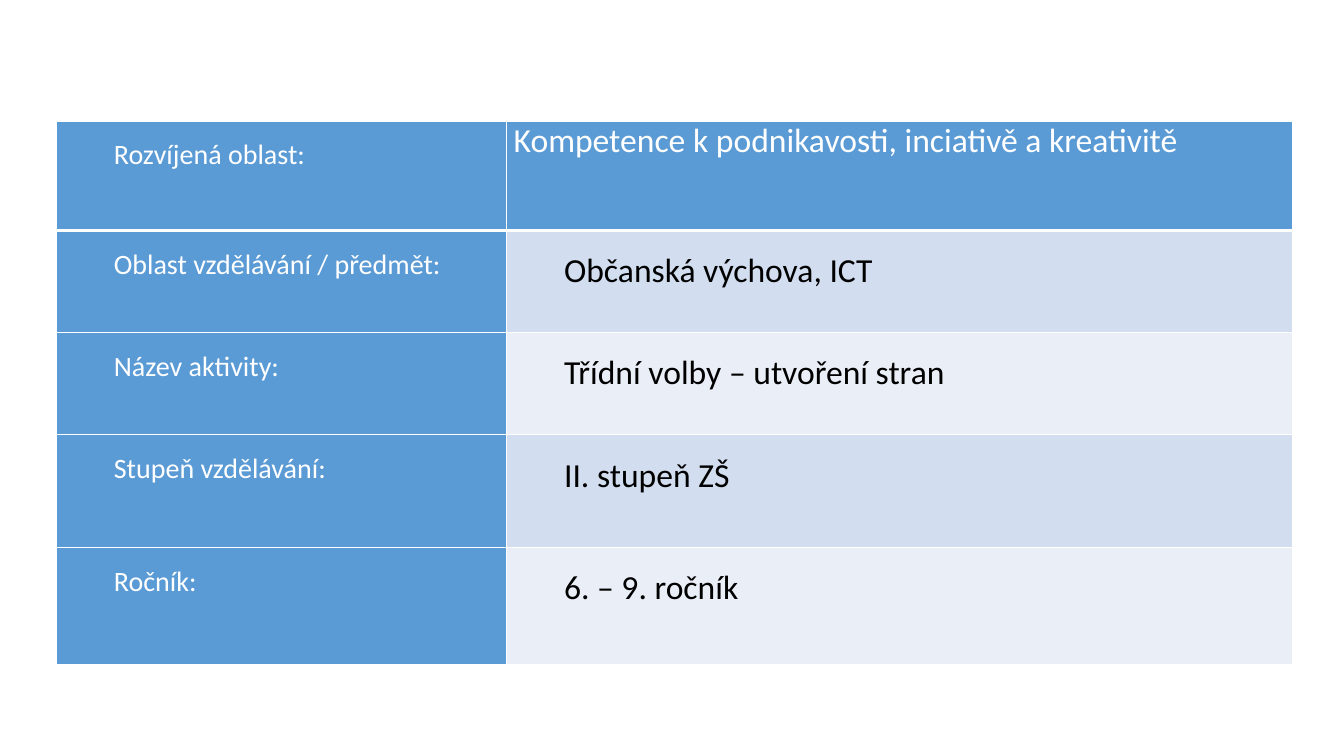
from lxml.etree import SubElement as Sub
from pptx import Presentation
from pptx.dml.color import RGBColor as RGB
from pptx.oxml.ns import qn
from pptx.util import Emu, Inches, Pt

WHITE = RGB(0xFF, 0xFF, 0xFF)
BLACK = RGB(0, 0, 0)
BLUE = RGB(0x5B, 0x9B, 0xD5)
BANDS = [RGB(0xEA, 0xEF, 0xF7), RGB(0xD2, 0xDE, 0xEF)]

# Sizes as shares of the slide
LEFT, TOP = 0.042, 0.16
COLS = [0.335, 0.585]
ROWS = [0.145, 0.135, 0.135, 0.149, 0.155]

FACTS = [
    ("Rozvíjená oblast:", "Kompetence k podnikavosti, inciativě a kreativitě"),
    ("Oblast vzdělávání / předmět:", "Občanská výchova, ICT"),
    ("Název aktivity:", "Třídní volby – utvoření stran"),
    ("Stupeň vzdělávání:", "II. stupeň ZŠ"),
    ("Ročník:", "6. – 9. ročník"),
]


def put(item, values):
    for name, value in values.items():
        setattr(item, name, value)


class Page:
    font = {"name": "Calibri", "bold": False}
    inset = {"margin_left": Inches(0.07), "margin_right": Inches(0.07),
             "margin_top": 0, "margin_bottom": 0}

    def __init__(self, deck):
        self.wide, self.high = deck.slide_width, deck.slide_height
        self.slide = deck.slides.add_slide(deck.slide_layouts[6])

    def x(self, share):
        return Emu(round(self.wide * share))

    def y(self, share):
        return Emu(round(self.high * share))

    def edge(self, cell, base):
        props = cell._tc.get_or_add_tcPr()
        for side in "LRTB":
            width = base if side == "B" else 1
            line = Sub(props, qn(f"a:ln{side}"), w=str(Pt(width)))
            Sub(Sub(line, qn("a:solidFill")), qn("a:srgbClr"), val=str(WHITE))

    def cell(self, cell, text, size, ink, fill, base, deep):
        self.edge(cell, base)
        put(cell, self.inset)
        cell.fill.solid()
        cell.fill.fore_color.rgb = fill
        para = cell.text_frame.paragraphs[0]
        if deep:
            para.line_spacing = 1.5
            para._p.get_or_add_pPr().set("marL", str(Inches(0.5)))
        run = para.add_run()
        run.text = text
        put(run.font, {**self.font, "size": Pt(size)})
        run.font.color.rgb = ink

    def table(self, facts):
        grid = self.slide.shapes.add_table(
            len(ROWS), len(COLS), self.x(LEFT), self.y(TOP),
            self.x(sum(COLS)), self.y(sum(ROWS))).table
        for col, share in zip(grid.columns, COLS):
            col.width = self.x(share)
        for row, share in zip(grid.rows, ROWS):
            row.height = self.y(share)
        for r, (label, value) in enumerate(facts):
            head = r == 0
            base = 3 if head else 1
            ink, fill = (WHITE, BLUE) if head else (BLACK, BANDS[r % 2])
            self.cell(grid.cell(r, 0), label, 20, WHITE, BLUE, base, True)
            self.cell(grid.cell(r, 1), value, 24, ink, fill, base, not head)


def main():
    deck = Presentation()
    put(deck, {"slide_width": Inches(13.33), "slide_height": Inches(7.5)})
    # Activity overview
    Page(deck).table(FACTS)
    deck.save("out.pptx")


if __name__ == "__main__":
    main()
